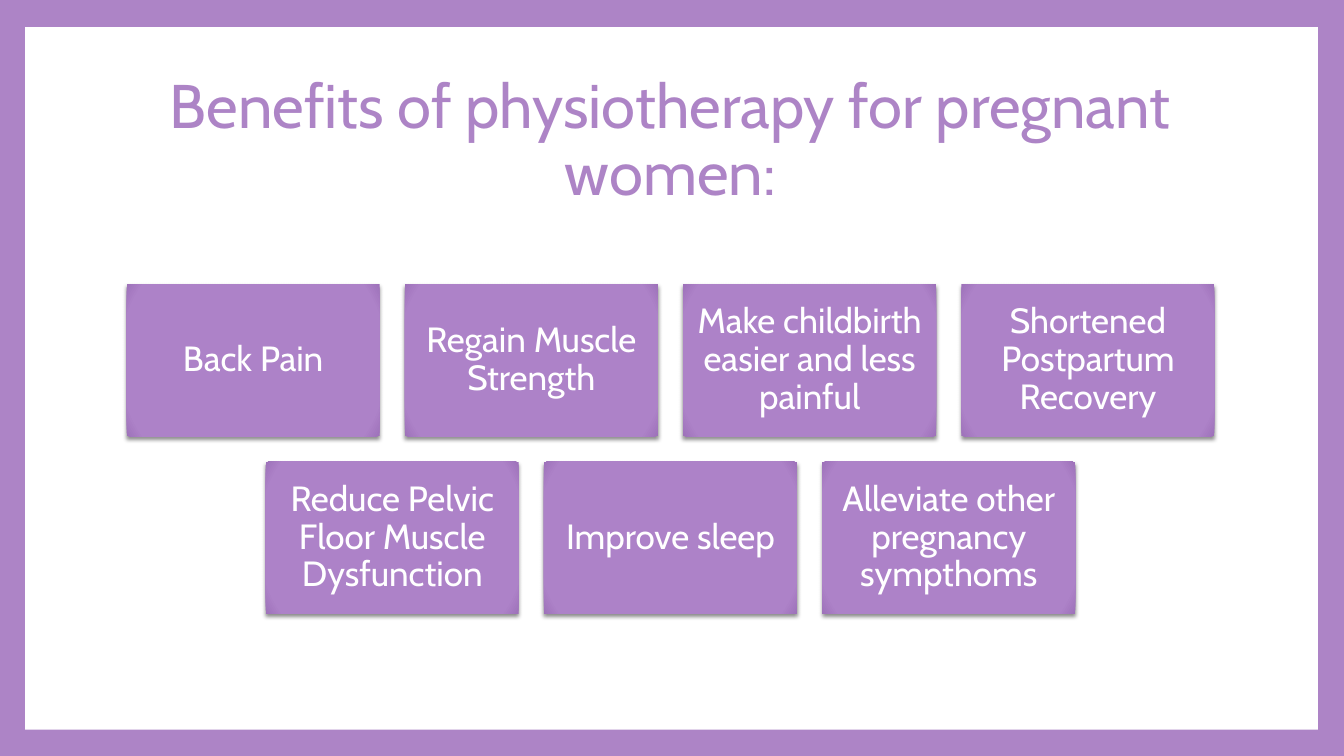
from lxml.etree import fromstring
from pptx import Presentation
from pptx.dml.color import RGBColor
from pptx.enum.shapes import MSO_SHAPE
from pptx.enum.text import MSO_ANCHOR, PP_ALIGN
from pptx.util import Inches, Pt

PURPLE, WHITE = "AD84C6", "FFFFFF"
FONT = "Cabin"
NAMESPACE = 'xmlns:a="http://schemas.openxmlformats.org/drawingml/2006/main"'
CARD_WIDTH, CARD_HEIGHT, GAP = 2.51, 1.51, 0.25
BENEFIT_ROWS = [
    ["Back Pain", "Regain Muscle Strength",
     "Make childbirth easier and less painful",
     "Shortened Postpartum Recovery"],
    ["Reduce Pelvic Floor Muscle Dysfunction", "Improve sleep",
     "Alleviate other pregnancy sympthoms"],
]
GRADIENT_STOPS = [(0, PURPLE), (90, "AD82C8"), (100, "9E72BA")]


def color(value):
    return RGBColor.from_string(value)


def write_centered(shape, text, size, value, inset):
    frame = shape.text_frame
    frame.word_wrap = True
    frame.vertical_anchor = MSO_ANCHOR.MIDDLE
    frame.margin_left = frame.margin_right = Inches(0.1)
    frame.margin_top = frame.margin_bottom = Inches(inset)
    para = frame.paragraphs[0]
    para.alignment = PP_ALIGN.CENTER
    para.line_spacing = 0.9
    para.space_before = Pt(0)
    span = para.add_run()
    span.text = text
    span.font.name = FONT
    span.font.size = Pt(size)
    span.font.color.rgb = color(value)


def add_rectangle(page, left, top, width, height):
    box = page.shapes.add_shape(MSO_SHAPE.RECTANGLE, Inches(left), Inches(top),
                                Inches(width), Inches(height))
    box.line.fill.background()
    box.shadow.inherit = False
    return box


def add_gradient_and_shadow(box):
    stops = "".join(
        f'<a:gs pos="{position * 1000}"><a:srgbClr val="{value}"/></a:gs>'
        for position, value in GRADIENT_STOPS)
    properties = box._element.spPr
    properties.find("{*}ln").addprevious(fromstring(
        f'<a:gradFill {NAMESPACE} rotWithShape="1"><a:gsLst>{stops}</a:gsLst>'
        '<a:path path="circle"><a:fillToRect l="100000" t="100000" '
        'r="100000" b="100000"/></a:path></a:gradFill>'))
    properties.find("{*}effectLst").append(fromstring(
        f'<a:outerShdw {NAMESPACE} blurRad="{Pt(3)}" dist="{Pt(2)}" '
        'dir="5400000" rotWithShape="0"><a:srgbClr val="000000">'
        '<a:alpha val="45000"/></a:srgbClr></a:outerShdw>'))


def add_frame(page):
    """Purple background with a white panel behind everything else."""
    background = page.background.fill
    background.solid()
    background.fore_color.rgb = color(PURPLE)
    panel = add_rectangle(page, 0.25, 0.27, 12.82, 6.97)
    panel.fill.solid()
    panel.fill.fore_color.rgb = color(WHITE)
    page.shapes.title._element.addprevious(panel._element)


def add_title(page, left, top, width, height):
    title = page.shapes.title
    title.left, title.top = Inches(left), Inches(top)
    title.width, title.height = Inches(width), Inches(height)
    write_centered(title, "Benefits of physiotherapy for pregnant women:",
                   44, PURPLE, 0.05)


def add_benefits(page, left, top, width):
    """Rows of cards, each row centred in the given width."""
    for row, benefits in enumerate(BENEFIT_ROWS):
        row_width = len(benefits) * (CARD_WIDTH + GAP) - GAP
        row_left = left + (width - row_width) / 2
        for column, benefit in enumerate(benefits):
            card = add_rectangle(page, row_left + column * (CARD_WIDTH + GAP),
                                 top + row * (CARD_HEIGHT + GAP),
                                 CARD_WIDTH, CARD_HEIGHT)
            add_gradient_and_shadow(card)
            write_centered(card, benefit, 25, WHITE, 0.1)


def main():
    deck = Presentation()
    deck.slide_width, deck.slide_height = Inches(13.33), Inches(7.5)
    page = deck.slides.add_slide(deck.slide_layouts[5])
    add_frame(page)
    add_title(page, 1.25, 0.67, 10.8, 1.48)
    add_benefits(page, 1.25, 2.82, 10.8)
    deck.save("out.pptx")


if __name__ == "__main__":
    main()
